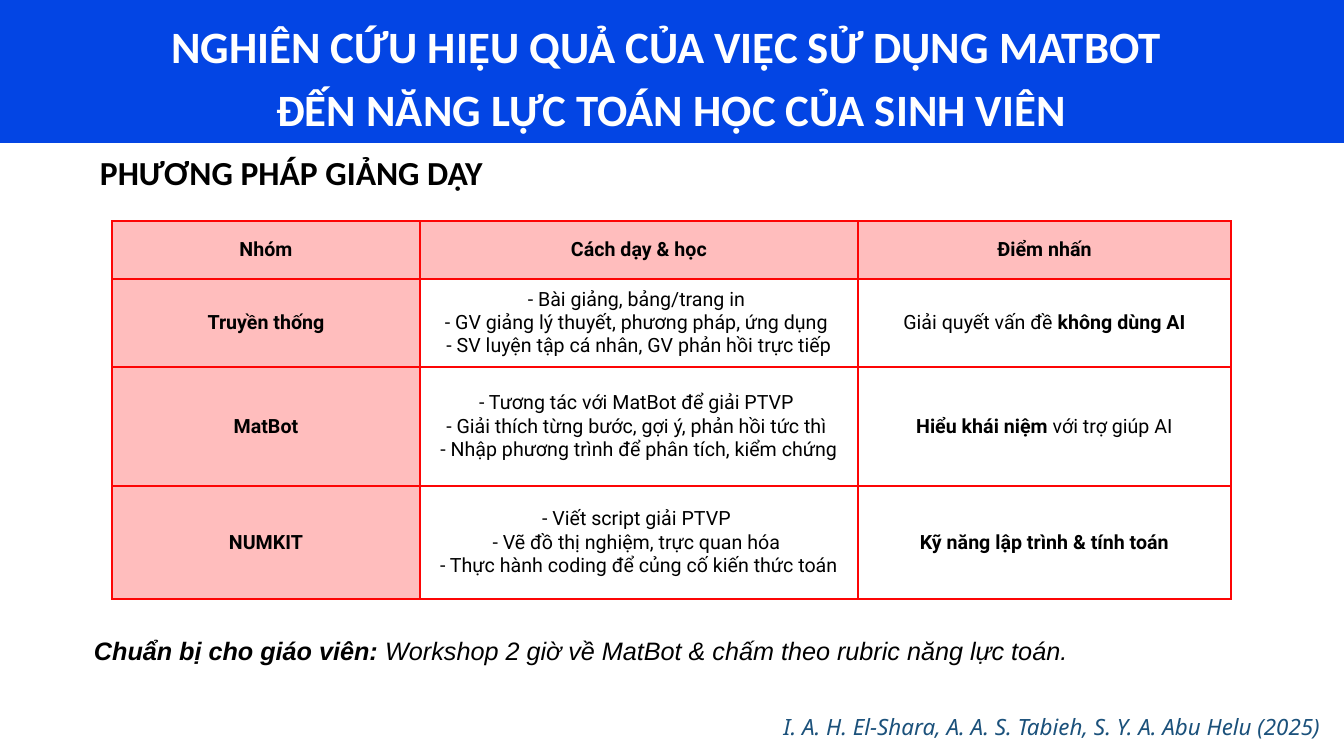
import pptx
import pptx.util
import pptx.oxml
import pptx.oxml.ns
import pptx.dml.color
import pptx.enum.text
import pptx.enum.shapes

# Text between asterisks is bold.
TITLE = ["*NGHIÊN CỨU HIỆU QUẢ CỦA VIỆC SỬ DỤNG MATBOT *",
         "*ĐẾN NĂNG LỰC TOÁN HỌC CỦA SINH VIÊN*"]
HEADING = ["*PHƯƠNG PHÁP GIẢNG DẠY*"]
NOTE = ["*Chuẩn bị cho giáo viên:* Workshop 2 giờ về MatBot & chấm theo rubric năng lực toán."]
SOURCE = ["I. A. H. El-Shara, A. A. S. Tabieh, S. Y. A. Abu Helu (2025)"]
ROWS = [
    (["*Nhóm*"], ["*Cách dạy & học*"], ["*Điểm nhấn*"]),
    (["*Truyền thống*"],
     ["- Bài giảng, bảng/trang in ",
      "- GV giảng lý thuyết, phương pháp, ứng dụng ",
      "- SV luyện tập cá nhân, GV phản hồi trực tiếp"],
     ["Giải quyết vấn đề *không dùng AI*"]),
    (["*MatBot*"],
     ["- Tương tác với MatBot để giải PTVP ",
      "- Giải thích từng bước, gợi ý, phản hồi tức thì ",
      "- Nhập phương trình để phân tích, kiểm chứng"],
     ["*Hiểu khái niệm* với trợ giúp AI"]),
    (["*NUMKIT*"],
     ["- Viết script giải PTVP ",
      "- Vẽ đồ thị nghiệm, trực quan hóa ",
      "- Thực hành coding để củng cố kiến thức toán"],
     ["*Kỹ năng lập trình & tính toán*"]),
]
WIDTHS = [308, 438, 373]
HEIGHTS = [58, 88, 119, 113]

THEME = {
    "band": "0345E4", "tint": "FFBDBD", "rule": "FD0505",
    "title": {"name": "Calibri", "size": 32, "color": "FFFFFF"},
    "heading": {"name": "Calibri", "size": 24, "color": "000000"},
    "cell": {"name": "Roboto", "size": 14, "color": "000000"},
    "note": {"name": "Arial", "size": 18, "color": "000000", "italic": True},
    "source": {"name": "Noto Sans", "size": 16, "color": "1B517B", "italic": True},
}
ALIGN = pptx.enum.text.PP_ALIGN
ANCHOR = pptx.enum.text.MSO_ANCHOR
Pt = pptx.util.Pt


def px(n):
    return round(n * 914400 / 100.8)


def rgb(code):
    return pptx.dml.color.RGBColor.from_string(code)


def assign(target, values):
    for key, value in values.items():
        setattr(target, key, value)


def write(frame, lines, style, **form):
    """Fill a text frame, one paragraph a line, bold between asterisks."""
    for i, line in enumerate(lines):
        para = frame.paragraphs[0] if i == 0 else frame.add_paragraph()
        assign(para, form)
        for j, part in enumerate(line.split("*")):
            if part:
                run = para.add_run()
                run.text = part
                assign(run.font, {"name": style["name"], "size": Pt(style["size"]),
                                  "bold": j % 2 == 1,
                                  "italic": style.get("italic", False)})
                run.font.color.rgb = rgb(style["color"])


def label(slide, box, lines, style, pad=(0, 0, 0, 0), anchor=ANCHOR.TOP, **form):
    frame = slide.shapes.add_textbox(*map(px, box)).text_frame
    sides = ("margin_left", "margin_top", "margin_right", "margin_bottom")
    assign(frame, dict(zip(sides, map(px, pad))))
    assign(frame, {"word_wrap": True, "vertical_anchor": anchor})
    write(frame, lines, THEME[style], **form)


def border(cell):
    props = cell._tc.get_or_add_tcPr()
    for side in "LRTB":
        props.append(pptx.oxml.parse_xml(
            f'<a:ln{side} {pptx.oxml.ns.nsdecls("a")} w="{Pt(1)}">'
            f'<a:solidFill><a:srgbClr val="{THEME["rule"]}"/></a:solidFill>'
            f'</a:ln{side}>'))


def grid(slide, left, top):
    table = slide.shapes.add_table(
        len(ROWS), len(WIDTHS), px(left), px(top),
        px(sum(WIDTHS)), px(sum(HEIGHTS))).table
    assign(table, {"first_row": False, "horz_banding": False})
    for col, width in zip(table.columns, WIDTHS):
        col.width = px(width)
    for r, (row, height) in enumerate(zip(ROWS, HEIGHTS)):
        table.rows[r].height = px(height)
        for c, lines in enumerate(row):
            cell = table.cell(r, c)
            assign(cell, {"vertical_anchor": ANCHOR.MIDDLE,
                          "margin_left": px(8), "margin_right": px(8),
                          "margin_top": px(4), "margin_bottom": px(4)})
            border(cell)
            if r == 0 or c == 0:
                cell.fill.solid()
                cell.fill.fore_color.rgb = rgb(THEME["tint"])
            else:
                cell.fill.background()
            write(cell.text_frame, lines, THEME["cell"], alignment=ALIGN.CENTER)


def main():
    deck = pptx.Presentation()
    assign(deck, {"slide_width": px(1344), "slide_height": px(756)})
    slide = deck.slides.add_slide(deck.slide_layouts[6])

    band = slide.shapes.add_shape(
        pptx.enum.shapes.MSO_SHAPE.RECTANGLE, 0, 0, px(1344), px(143))
    band.shadow.inherit = False
    band.fill.solid()
    band.fill.fore_color.rgb = rgb(THEME["band"])
    band.line.fill.background()

    label(slide, (84, 10, 1175, 123), TITLE, "title",
          alignment=ALIGN.CENTER, line_spacing=Pt(44.8))
    label(slide, (356, 693, 964, 42), SOURCE, "source",
          alignment=ALIGN.RIGHT, line_spacing=Pt(33.6))
    label(slide, (84, 151, 891, 60), HEADING, "heading",
          pad=(16, 5, 10, 5), line_spacing=0.9)
    grid(slide, 112, 221)
    label(slide, (84, 610, 1018, 61), NOTE, "note",
          pad=(10, 5, 10, 5), anchor=ANCHOR.BOTTOM)
    deck.save("out.pptx")


if __name__ == "__main__":
    main()
